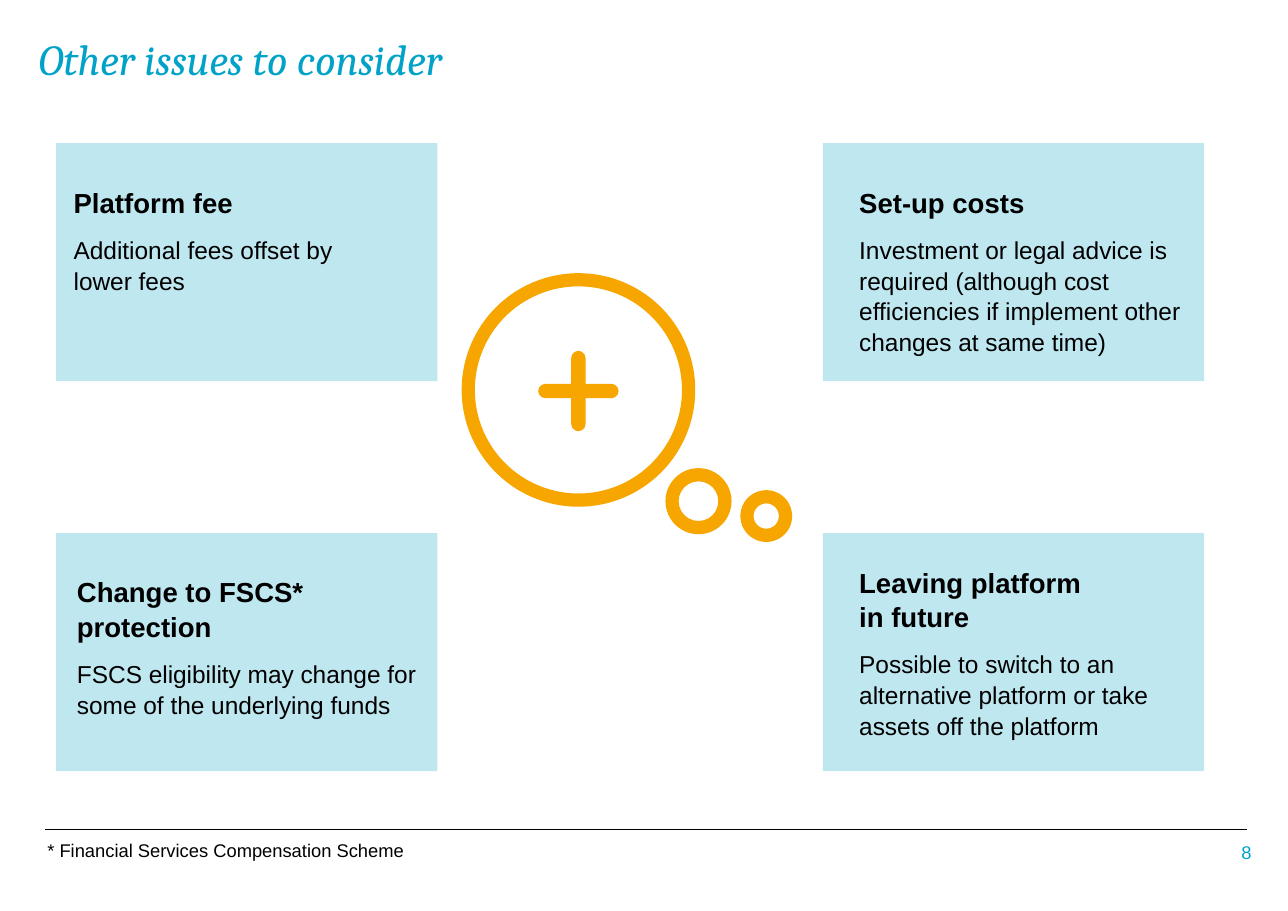
from dataclasses import dataclass

from lxml.etree import SubElement
from pptx import Presentation
from pptx.dml.color import RGBColor
from pptx.enum.shapes import MSO_CONNECTOR, MSO_SHAPE
from pptx.enum.text import MSO_ANCHOR, PP_ALIGN
from pptx.oxml.ns import qn
from pptx.util import Inches, Pt


@dataclass(frozen=True)
class Theme:
    teal: RGBColor = RGBColor(0x00, 0xA3, 0xC7)
    amber: RGBColor = RGBColor(0xF7, 0xA6, 0x00)
    black: RGBColor = RGBColor(0, 0, 0)
    panel_alpha: int = 25000
    title_font: str = "Cambria"
    body_font: str = "Arial"
    title_size: int = 28
    heading_size: int = 18
    body_size: int = 16
    small_size: int = 12
    line_spacing: float = 1.05
    heading_gap: float = 9.7


THEME = Theme()
PANEL_W, PANEL_H = 3.46, 2.16
LEFT, RIGHT = 0.51, 7.47
TOP, BOTTOM = 1.3, 4.84

PANELS = [
    (LEFT, TOP, 0.06, 0.32, 3.31, ["Platform fee"],
     ["Additional fees offset by", "lower fees"]),
    (RIGHT, TOP, 0.23, 0.32, 3.18, ["Set-up costs"],
     ["Investment or legal advice is required (although cost "
      "efficiencies if implement other changes at same time)"]),
    (LEFT, BOTTOM, 0.09, 0.32, 3.31, ["Change to FSCS* protection"],
     ["FSCS eligibility may change for some of the underlying funds"]),
    (RIGHT, BOTTOM, 0.23, 0.23, 3.11, ["Leaving platform", "in future"],
     ["Possible to switch to an alternative platform or take "
      "assets off the platform"]),
]


def add_text_frame(s, x, y, w, h, inset_x=0.1, inset_y=0.05, anchor=MSO_ANCHOR.TOP):
    tf = s.shapes.add_textbox(Inches(x), Inches(y), Inches(w), Inches(h)).text_frame
    tf.word_wrap = True
    tf.vertical_anchor = anchor
    tf.margin_left = tf.margin_right = Inches(inset_x)
    tf.margin_top = tf.margin_bottom = Inches(inset_y)
    return tf


def add_lines(p, lines, size, color, font=THEME.body_font, bold=False, italic=False):
    for i, line in enumerate(lines):
        if i:
            p.add_line_break()
        r = p.add_run()
        r.text = line
        r.font.name = font
        r.font.size = Pt(size)
        r.font.color.rgb = color
        r.font.bold = bold
        r.font.italic = italic


def add_filled(s, kind, x, y, w, h, color):
    sp = s.shapes.add_shape(kind, Inches(x), Inches(y), Inches(w), Inches(h))
    sp.shadow.inherit = False
    sp.fill.solid()
    sp.fill.fore_color.rgb = color
    sp.line.fill.background()
    return sp


def add_title(s, x, y, w, h):
    tf = add_text_frame(s, x, y, w, h, 0.11, 0.06)
    add_lines(tf.paragraphs[0], ["Other issues to consider"], THEME.title_size,
              THEME.teal, THEME.title_font, italic=True)


def add_panel(s, x, y, dx, dy, text_w, heading, body):
    sp = add_filled(s, MSO_SHAPE.RECTANGLE, x, y, PANEL_W, PANEL_H, THEME.teal)
    color = sp.fill._xPr.find(qn("a:solidFill"))[0]
    SubElement(color, qn("a:alpha"), val=str(THEME.panel_alpha))
    tf = add_text_frame(s, x + dx, y + dy, text_w, PANEL_H - 2 * dy)
    p = tf.paragraphs[0]
    p.line_spacing = THEME.line_spacing
    add_lines(p, heading, THEME.heading_size, THEME.black, bold=True)
    p = tf.add_paragraph()
    p.line_spacing = THEME.line_spacing
    p.space_before = Pt(THEME.heading_gap)
    add_lines(p, body, THEME.body_size, THEME.black)


def add_thought_icon(s, x, y):
    band = 0.12
    for dx, dy, size in [(1.85, 1.77, 0.6), (2.53, 1.97, 0.47), (0, 0, 2.12)]:
        ring = add_filled(s, MSO_SHAPE.DONUT, x + dx, y + dy, size, size, THEME.amber)
        ring.adjustments[0] = band / size
    arm, bar = 0.73, 0.13
    cx, cy = x + 1.06, y + 1.07
    for w, h in [(arm, bar), (bar, arm)]:
        sp = add_filled(s, MSO_SHAPE.ROUNDED_RECTANGLE,
                        cx - w / 2, cy - h / 2, w, h, THEME.amber)
        sp.adjustments[0] = 0.5


def add_footer(s, x, y, w):
    rule = s.shapes.add_connector(MSO_CONNECTOR.STRAIGHT, Inches(x), Inches(y),
                                  Inches(x + w), Inches(y))
    rule.line.color.rgb = THEME.black
    rule.line.width = Pt(0.75)
    SubElement(rule._element.spPr, qn("a:effectLst"))
    for dx, dy, text_w, text, color, align in [
        (-0.11, 0.07, 6.4, "* Financial Services Compensation Scheme",
         THEME.black, PP_ALIGN.LEFT),
        (10.27, 0.09, 0.81, "8", THEME.teal, PP_ALIGN.RIGHT),
    ]:
        tf = add_text_frame(s, x + dx, y + dy, text_w, 0.24, 0.13, 0.06,
                            MSO_ANCHOR.MIDDLE)
        p = tf.paragraphs[0]
        p.alignment = align
        add_lines(p, [text], THEME.small_size, color)


def main():
    prs = Presentation()
    prs.slide_width, prs.slide_height = Inches(11.69), Inches(8.27)
    s = prs.slides.add_slide(prs.slide_layouts[6])
    add_footer(s, 0.41, 7.53, 10.91)
    add_title(s, 0.24, 0.24, 9.23, 1.38)
    for panel in PANELS:
        add_panel(s, *panel)
    add_thought_icon(s, 4.19, 2.48)
    prs.save("out.pptx")


if __name__ == "__main__":
    main()
